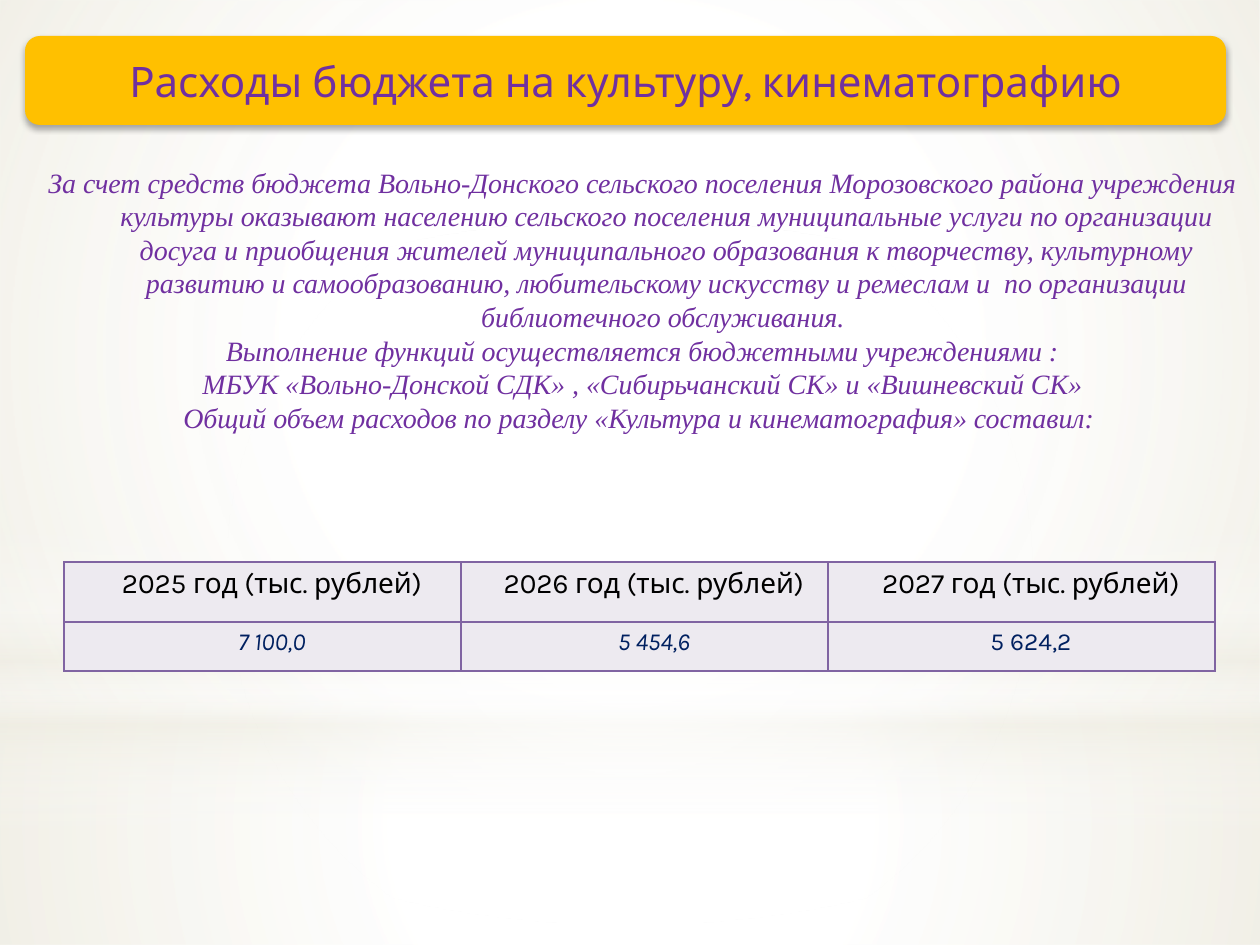
from lxml.etree import SubElement, fromstring
from pptx import Presentation
from pptx.dml.color import RGBColor
from pptx.enum.shapes import MSO_SHAPE
from pptx.enum.text import MSO_ANCHOR, PP_ALIGN
from pptx.oxml.ns import nsdecls, qn
from pptx.util import Pt

PX = 914400 / 126
C = {"white": "FFFFFF", "cream": "EEECE1", "gold": "FFC000", "purple": "7030A0",
     "border": "8064A2", "cell": "EDEAF0", "black": "000000", "navy": "002060"}


def px(*values):
    return [round(v * PX) for v in values]


def add_text(p, text, size, font, color, italic=False):
    p.alignment = PP_ALIGN.CENTER
    r = p.add_run()
    r.text = text
    r.font.size = Pt(size)
    r.font.name = font
    r.font.italic = italic
    r.font.color.rgb = RGBColor.from_string(C[color])


prs = Presentation()
prs.slide_width, prs.slide_height = px(1260, 945)
s = prs.slides.add_slide(prs.slide_layouts[6])

radial = '<a:path path="circle"><a:fillToRect l="50000" t="50000" r="50000" b="50000"/></a:path>'
linear = '<a:lin ang="5400000" scaled="0"/>'
glows = [
    (MSO_SHAPE.RECTANGLE, (0, 703, 1260, 242), radial,
     [(0, "white", 91), (37, "white", 76), (100, "cream", 79)]),
    (MSO_SHAPE.RECTANGLE, (0, 0, 1260, 703), radial,
     [(0, "white", 89), (48, "white", 62), (100, "cream", 79)]),
    (MSO_SHAPE.RECTANGLE, (0, 519, 1260, 315), linear,
     [(0, "white", 0), (29, "white", 30), (45, "cream", 40),
      (55, "white", 26), (65, "cream", 60), (100, "white", 0)]),
    (MSO_SHAPE.OVAL, (0, 221, 1260, 703), radial,
     [(0, "white", 100), (56, "white", 0)]),
]
for kind, box, direction, stops in glows:
    sp = s.shapes.add_shape(kind, *px(*box))
    sp.shadow.inherit = False
    sp.line.fill.background()
    stop_xml = "".join(
        f'<a:gs pos="{pos * 1000}"><a:srgbClr val="{C[color]}">'
        f'<a:alpha val="{alpha * 1000}"/></a:srgbClr></a:gs>'
        for pos, color, alpha in stops)
    sp.element.spPr.find(qn("a:prstGeom")).addnext(fromstring(
        f'<a:gradFill {nsdecls("a")} rotWithShape="1"><a:gsLst>{stop_xml}</a:gsLst>{direction}</a:gradFill>'))

title = s.shapes.add_shape(MSO_SHAPE.ROUNDED_RECTANGLE, *px(25, 36, 1201, 89))
title.shadow.inherit = False
title.fill.solid()
title.fill.fore_color.rgb = RGBColor.from_string(C["gold"])
title.line.fill.background()
title.element.spPr.find(qn("a:effectLst")).append(fromstring(
    f'<a:outerShdw {nsdecls("a")} blurRad="44450" dist="27940" dir="5400000" rotWithShape="0">'
    f'<a:srgbClr val="{C["black"]}"><a:alpha val="32000"/></a:srgbClr></a:outerShdw>'))
tf = title.text_frame
tf.word_wrap = True
tf.vertical_anchor = MSO_ANCHOR.MIDDLE
add_text(tf.paragraphs[0], "Расходы бюджета на культуру, кинематографию", 24, "Karla", "purple")

body = [
    "За счет средств бюджета Вольно-Донского сельского поселения Морозовского района "
    "учреждения культуры оказывают населению сельского поселения муниципальные услуги "
    "по организации досуга и приобщения жителей муниципального образования к творчеству, "
    "культурному развитию и самообразованию, любительскому искусству и ремеслам и  "
    "по организации библиотечного обслуживания. ",
    "Выполнение функций осуществляется бюджетными учреждениями :",
    "МБУК «Вольно-Донской СДК» , «Сибирьчанский СК» и «Вишневский СК»",
    "Общий объем расходов по разделу «Культура и кинематография» составил: ",
]
indent, = px(48)
tf = s.shapes.add_textbox(*px(25, 159, 1235, 290)).text_frame
tf.word_wrap = True
for i, text in enumerate(body):
    p = tf.add_paragraph() if i else tf.paragraphs[0]
    pPr = p._p.get_or_add_pPr()
    pPr.set("marL", str(indent))
    pPr.set("indent", str(-indent))
    add_text(p, text, 16, "Times New Roman", "purple", True)

years = [2025, 2026, 2027]
rows = [
    (60, 16, "black", [(f"{year} год (тыс. рублей)", False) for year in years]),
    (49, 14, "navy", [("7 100,0", True), ("5 454,6", True), ("5 624,2", False)]),
]
widths = px(397, 367, 387)
table = s.shapes.add_table(2, 3, *px(64, 562, 1151, 109)).table
for column, width in zip(table.columns, widths):
    column.width = width
cell_indent, = px(19)
for i, (height, size, color, texts) in enumerate(rows):
    table.rows[i].height, = px(height)
    for j, (text, italic) in enumerate(texts):
        cell = table.cell(i, j)
        p = cell.text_frame.paragraphs[0]
        p._p.get_or_add_pPr().set("marL", str(cell_indent))
        add_text(p, text, size, "Karla", color, italic)
        p.runs[0].font.bold = False
        tcPr = cell._tc.get_or_add_tcPr()
        for side in ("a:lnL", "a:lnR", "a:lnT", "a:lnB"):
            ln = SubElement(tcPr, qn(side), w="12700")
            SubElement(SubElement(ln, qn("a:solidFill")), qn("a:srgbClr"), val=C["border"])
        cell.fill.solid()
        cell.fill.fore_color.rgb = RGBColor.from_string(C["cell"])

prs.save("out.pptx")
